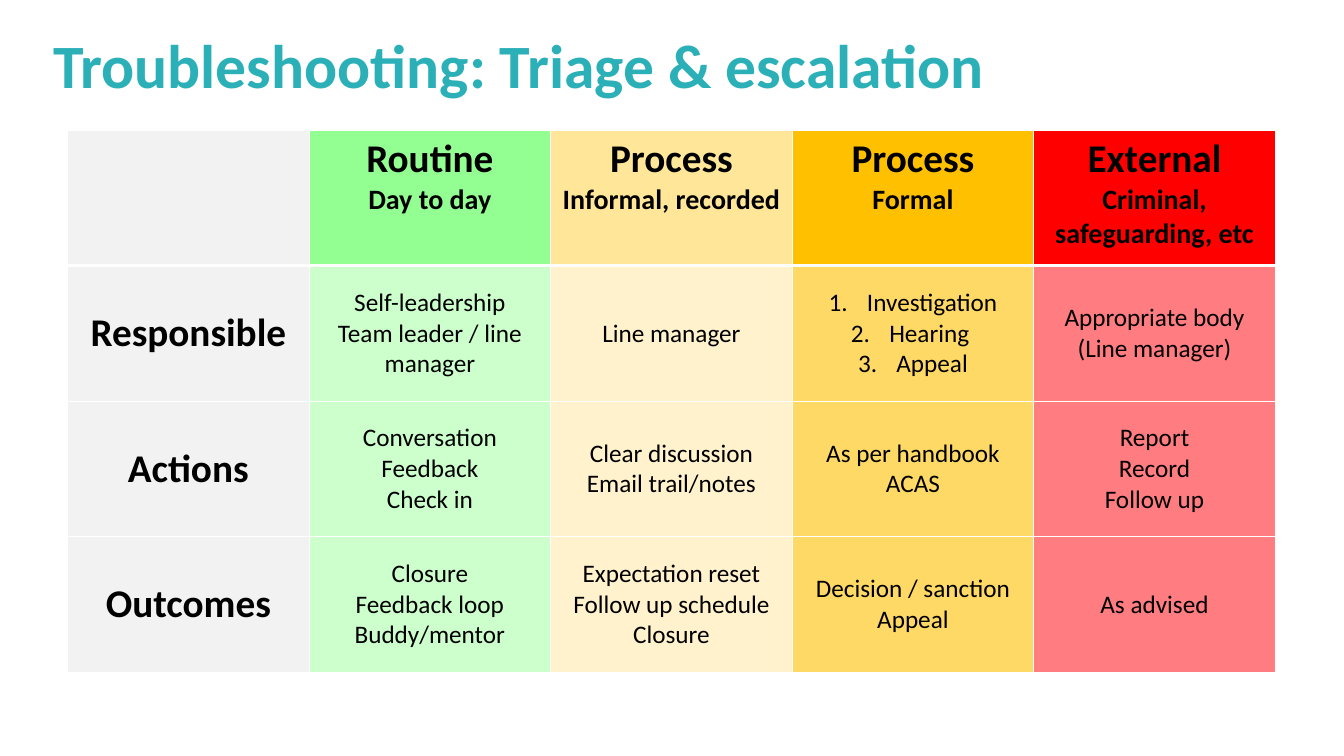
from lxml.etree import SubElement
from pptx import Presentation
from pptx.dml.color import RGBColor
from pptx.enum.text import MSO_ANCHOR, PP_ALIGN
from pptx.oxml.ns import qn
from pptx.util import Emu, Inches, Pt

TITLE = "Troubleshooting: Triage & escalation"
# heading, subheading, header fill, body fill
STAGES = [
    ("Routine", "Day to day", "93FF93", "CCFFCC"),
    ("Process", "Informal, recorded", "FFE699", "FFF2CC"),
    ("Process", "Formal", "FFC000", "FFD966"),
    ("External", "Criminal, safeguarding, etc", "FF0000", "FF7C80"),
]
# A tuple of lines is a numbered list
ASPECTS = {
    "Responsible": [
        ["Self-leadership", "Team leader / line manager"],
        ["Line manager"],
        ("Investigation", "Hearing ", "Appeal"),
        ["Appropriate body", "(Line manager)"],
    ],
    "Actions": [
        ["Conversation", "Feedback", "Check in"],
        ["Clear discussion", "Email trail/notes"],
        ["As per handbook", "ACAS"],
        ["Report", "Record", "Follow up"],
    ],
    "Outcomes": [
        ["Closure", "Feedback loop", "Buddy/mentor"],
        ["Expectation reset", "Follow up schedule", "Closure"],
        ["Decision / sanction", "Appeal"],
        ["As advised"],
    ],
}
FONT, TEAL, BLACK, WHITE, GREY = "Calibri", "2CB0B8", "000000", "FFFFFF", "F2F2F2"
HEADING, SUBHEADING, BODY = 28, 20, 18
TABLE_LEFT, TABLE_TOP, TABLE_WIDTH, TABLE_HEIGHT = 0.67, 1.29, 11.98, 5.38
NUMBER_INDENT = Inches(0.38)


def rgb(color):
    return RGBColor.from_string(color)


def write(paragraph, text, size=BODY, bold=False, color=BLACK, align=PP_ALIGN.CENTER):
    paragraph.alignment = align
    run = paragraph.add_run()
    run.text = text
    run.font.name, run.font.size, run.font.bold = FONT, Pt(size), bold
    run.font.color.rgb = rgb(color)


def number(paragraph):
    """Make the paragraph an item of a 1. 2. 3. list with a hanging indent."""
    properties = paragraph._p.get_or_add_pPr()
    properties.set("marL", str(NUMBER_INDENT))
    properties.set("indent", str(-NUMBER_INDENT))
    SubElement(properties, qn("a:buFont"), typeface="+mj-lt")
    SubElement(properties, qn("a:buAutoNum"), type="arabicPeriod")


def paint(cell, fill, top=1, bottom=1):
    """Give the cell white borders, in points, and then its fill."""
    properties = cell._tc.get_or_add_tcPr()
    for side, width in (("L", 1), ("R", 1), ("T", top), ("B", bottom)):
        border = SubElement(properties, qn(f"a:ln{side}"), w=str(Pt(width)))
        SubElement(SubElement(border, qn("a:solidFill")), qn("a:srgbClr"), val=WHITE)
    cell.fill.solid()
    cell.fill.fore_color.rgb = rgb(fill)


def fill_cell(cell, lines, numbered=False, **text_format):
    """Write one paragraph a line; a line is text or (text, size)."""
    frame = cell.text_frame
    for index, line in enumerate(lines):
        paragraph = frame.add_paragraph() if index else frame.paragraphs[0]
        text, size = line if isinstance(line, tuple) else (line, BODY)
        write(paragraph, text, size=size, **text_format)
        if numbered:
            number(paragraph)


def add_title(slide):
    title = slide.shapes.add_textbox(Inches(0.43), Inches(0.25), Inches(11.5), Inches(0.87))
    frame = title.text_frame
    frame.word_wrap = True
    frame.vertical_anchor = MSO_ANCHOR.MIDDLE
    frame.paragraphs[0].line_spacing = 0.9
    write(frame.paragraphs[0], TITLE, size=44, bold=True, color=TEAL, align=PP_ALIGN.LEFT)


def add_triage_table(slide):
    rows, columns = len(ASPECTS) + 1, len(STAGES) + 1
    table = slide.shapes.add_table(
        rows, columns, Inches(TABLE_LEFT), Inches(TABLE_TOP),
        Inches(TABLE_WIDTH), Inches(TABLE_HEIGHT)).table
    table.first_row = table.horz_banding = False
    for column in table.columns:
        column.width = Emu(Inches(TABLE_WIDTH) // columns)
    for row in table.rows:
        row.height = Emu(Inches(TABLE_HEIGHT) // rows)

    paint(table.cell(0, 0), GREY, bottom=3)
    for c, (heading, subheading, header_fill, _) in enumerate(STAGES, 1):
        header = table.cell(0, c)
        paint(header, header_fill, bottom=3)
        fill_cell(header, [(heading, HEADING), (subheading, SUBHEADING)], bold=True)

    for r, (aspect, entries) in enumerate(ASPECTS.items(), 1):
        top = 3 if r == 1 else 1
        label = table.cell(r, 0)
        paint(label, GREY, top=top)
        fill_cell(label, [(aspect, HEADING)], bold=True)
        label.vertical_anchor = MSO_ANCHOR.MIDDLE
        for c, (lines, stage) in enumerate(zip(entries, STAGES), 1):
            entry = table.cell(r, c)
            paint(entry, stage[-1], top=top)
            fill_cell(entry, lines, numbered=isinstance(lines, tuple))
            entry.vertical_anchor = MSO_ANCHOR.MIDDLE


def main():
    deck = Presentation()
    deck.slide_width, deck.slide_height = Inches(13.33), Inches(7.5)
    slide = deck.slides.add_slide(deck.slide_layouts[6])
    add_title(slide)
    add_triage_table(slide)
    deck.save("out.pptx")


if __name__ == "__main__":
    main()
